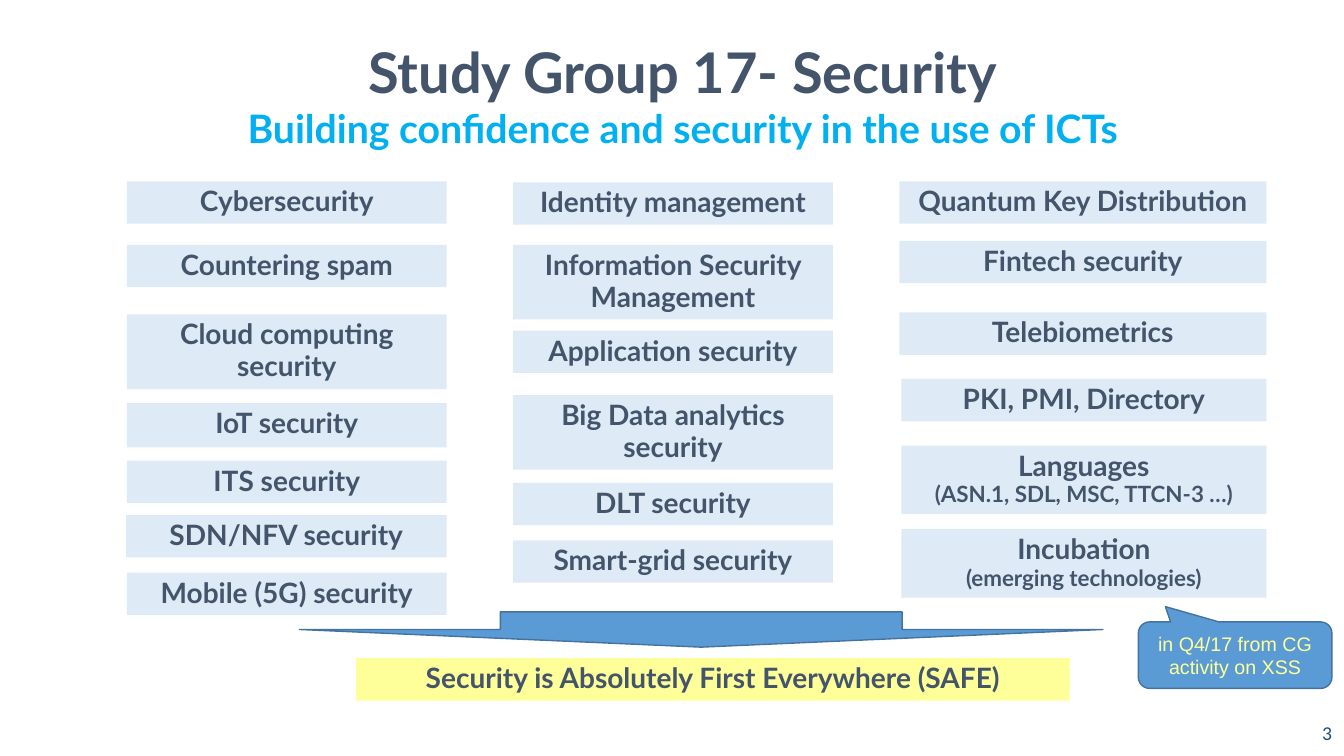
from dataclasses import dataclass

from pptx import Presentation
from pptx import util as u
from pptx.dml.color import RGBColor
from pptx.enum import shapes, text

PX = 9144


@dataclass(frozen=True)
class Theme:
    ink: str = "44546A"
    accent: str = "00B0F0"
    tile: str = "DEEBF7"
    banner: str = "FFFF99"
    blue: str = "5B9BD5"
    edge: str = "43739E"
    number: str = "1F4E79"
    heading: str = "Lato"
    note: str = "Arial"
    footer: str = "Calibri"
    title_size: int = 40
    subtitle_size: int = 28
    topic_size: int = 20
    detail_size: int = 16
    note_size: int = 14


T = Theme()

COLUMNS = [
    ((126, 180, 317, 430), [
        (0, 0, 42, ["Cybersecurity"]),
        (0, 63, 42, ["Countering spam"]),
        (0, 132, 74, ["Cloud computing security"]),
        (0, 220, 44, ["IoT security"]),
        (0, 277, 42, ["ITS security"]),
        (-1, 331, 42, ["SDN/NFV security"]),
        (0, 388, 42, ["Mobile (5G) security"]),
    ]),
    ((509, 181, 317, 397), [
        (0, 0, 42, ["Identity management"]),
        (0, 62, 74, ["Information Security Management"]),
        (0, 147, 42, ["Application security"]),
        (0, 211, 74, ["Big Data analytics security"]),
        (0, 298, 42, ["DLT security"]),
        (0, 355, 42, ["Smart-grid security"]),
    ]),
    ((892, 180, 364, 413), [
        (0, 0, 42, ["Quantum Key Distribution"]),
        (0, 59, 42, ["Fintech security"]),
        (0, 130, 42, ["Telebiometrics"]),
        (2, 196, 42, ["PKI, PMI, Directory"]),
        (2, 262, 68, ["Languages", "(ASN.1, SDL, MSC, TTCN-3 …)"]),
        (2, 345, 68, ["Incubation", "(emerging technologies)"]),
    ]),
]


def px(*lengths):
    return [u.Emu(n * PX) for n in lengths]


def write(tf, lines, sizes, colors, font=T.heading, bold=True, spacing=1.0, before=0,
          align=text.PP_ALIGN.CENTER, anchor=text.MSO_ANCHOR.TOP, grow=False):
    tf.word_wrap = True
    tf.vertical_anchor = anchor
    tf.auto_size = text.MSO_AUTO_SIZE.SHAPE_TO_FIT_TEXT if grow else text.MSO_AUTO_SIZE.NONE
    p = tf.paragraphs[0]
    p.alignment = align
    p.line_spacing = spacing
    p.space_before = u.Pt(before)
    for i, (line, size, color) in enumerate(zip(lines, sizes, colors)):
        if i:
            p.add_line_break()
        r = p.add_run()
        r.text = line
        r.font.size = u.Pt(size)
        r.font.name = font
        r.font.bold = bold
        r.font.color.rgb = RGBColor.from_string(color)


def add_box(s, kind, box, fill, edge=None):
    sp = s.shapes.add_shape(kind, *px(*box))
    sp.shadow.inherit = False
    sp.fill.solid()
    sp.fill.fore_color.rgb = RGBColor.from_string(fill)
    if edge:
        sp.line.color.rgb = RGBColor.from_string(edge)
        sp.line.width = u.Pt(1)
    else:
        sp.line.fill.background()
    return sp


def add_topic(s, box, lines, fill=T.tile):
    sp = add_box(s, shapes.MSO_SHAPE.RECTANGLE, box, fill)
    write(sp.text_frame, lines, (T.topic_size, T.detail_size), (T.ink, T.ink),
          spacing=0.95, before=5, grow=True)


def add_header(s, box):
    title = s.shapes.title
    title.left, title.top, title.width, title.height = px(*box)
    tf = title.text_frame
    tf.margin_left, tf.margin_top, tf.margin_right, tf.margin_bottom = px(5, 2, 5, 2)
    write(tf, ["Study Group 17- Security", "Building confidence and security in the use of ICTs"],
          (T.title_size, T.subtitle_size), (T.ink, T.accent), grow=True)


def add_column(s, box, topics):
    left, top, width, _ = box
    for dx, dy, height, lines in topics:
        add_topic(s, (left + dx, top + dy, width - dx, height), lines)


def add_conclusion(s, box):
    left, top, width, _ = box
    add_box(s, shapes.MSO_SHAPE.DOWN_ARROW, (left, top, width, 35), T.blue, T.edge)
    add_topic(s, (left + 56, top + 46, 708, 42),
              ["Security is Absolutely First Everywhere (SAFE)"], T.banner)


def add_callout(s, box):
    sp = add_box(s, shapes.MSO_SHAPE.ROUNDED_RECTANGULAR_CALLOUT, box, T.blue, T.edge)
    for i, value in enumerate((-0.36, -0.73, 0.17)):
        sp.adjustments[i] = value
    write(sp.text_frame, ["in Q4/17 from CG activity on XSS"], [T.note_size], [T.banner],
          font=T.note, bold=False, anchor=text.MSO_ANCHOR.MIDDLE)


def add_page_number(s, box):
    tf = s.shapes.add_textbox(*px(*box)).text_frame
    write(tf, ["3"], [T.note_size], [T.number], font=T.footer, bold=False,
          align=text.PP_ALIGN.RIGHT)


def main():
    prs = Presentation()
    prs.slide_width, prs.slide_height = px(1333, 750)
    s = prs.slides.add_slide(prs.slide_layouts[5])
    add_header(s, (104, 35, 1146, 119))
    for box, topics in COLUMNS:
        add_column(s, box, topics)
    add_conclusion(s, (297, 607, 797, 88))
    add_callout(s, (1129, 617, 192, 66))
    add_page_number(s, (1031, 710, 300, 40))
    prs.save("out.pptx")


if __name__ == "__main__":
    main()
